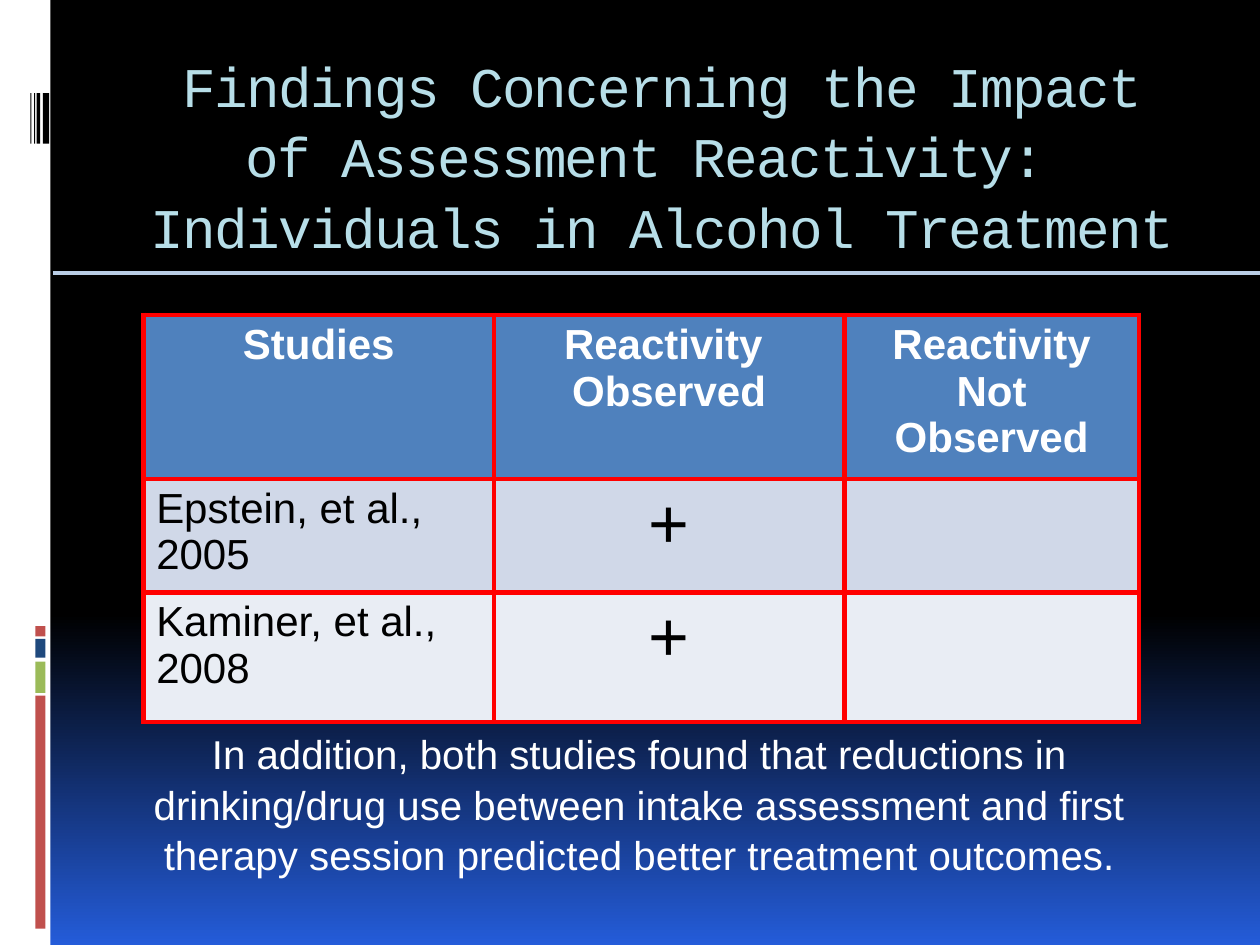
from pptx import Presentation
from pptx.dml.color import RGBColor
from pptx.enum.shapes import MSO_CONNECTOR, MSO_SHAPE
from pptx.enum.text import PP_ALIGN
from pptx.oxml import parse_xml
from pptx.oxml.ns import nsdecls
from pptx.util import Inches, Pt
from lxml.etree import SubElement
from pptx.oxml.ns import qn

BLACK = RGBColor(0x00, 0x00, 0x00)
WHITE = RGBColor(0xFF, 0xFF, 0xFF)
ROYAL = RGBColor(0x24, 0x5C, 0xD9)
RED = RGBColor(0xC0, 0x50, 0x4D)
GREEN = RGBColor(0x9B, 0xBB, 0x59)
NAVY = RGBColor(0x1F, 0x49, 0x7D)
AQUA = RGBColor(0xB7, 0xDE, 0xE8)
PALE = RGBColor(0xB9, 0xCD, 0xE5)
HEAD = RGBColor(0x4F, 0x81, 0xBD)
BANDS = [RGBColor(0xD0, 0xD8, 0xE8), RGBColor(0xE9, 0xED, 0xF4)]
BORDER = RGBColor(0xFF, 0x00, 0x00)


def style(par, size, color, font="Arial", bold=False, align=PP_ALIGN.CENTER):
    par.alignment = align
    for run in par.runs:
        run.font.size = Pt(size)
        run.font.name = font
        run.font.bold = bold
        run.font.color.rgb = color


def outline(cell):
    """Draw a 3 pt border on all four sides of a cell."""
    props = cell._tc.get_or_add_tcPr()
    for spot, side in enumerate(("lnL", "lnR", "lnT", "lnB")):
        props.insert(spot, parse_xml(
            f'<a:{side} {nsdecls("a")} w="{Pt(3)}"><a:solidFill>'
            f'<a:srgbClr val="{BORDER}"/></a:solidFill></a:{side}>'))


deck = Presentation()
deck.slide_width, deck.slide_height = Inches(10), Inches(7.5)
slide = deck.slides.add_slide(deck.slide_layouts[6])
shapes = slide.shapes

# Background: black, fading to blue at the bottom
back = slide.background.fill
back.gradient()
back.gradient_angle = 270
for stop, place, color in zip(back.gradient_stops, (0.65, 1), (BLACK, ROYAL)):
    stop.position = place
    stop.color.rgb = color

# Side strip with coloured blocks and thin black bars
bars = [
    (0, 0, 0.4, 7.5, WHITE),
    (0.28, 5.52, 0.08, 1.85, RED),
    (0.28, 5.25, 0.08, 0.25, GREEN),
    (0.28, 5.07, 0.08, 0.15, NAVY),
    (0.28, 4.97, 0.08, 0.08, RED),
]
for left, width in ((0.34, 0.05), (0.29, 0.03), (0.27, 0.01), (0.24, 0.01)):
    bars.append((left, 0.74, width, 0.4, BLACK))
for *box, color in bars:
    bar = shapes.add_shape(MSO_SHAPE.RECTANGLE, *map(Inches, box))
    bar.shadow.inherit = False
    bar.fill.solid()
    bar.fill.fore_color.rgb = color
    bar.line.fill.background()

# Title
title = shapes.add_textbox(Inches(1), Inches(0.33), Inches(8.5), Inches(1))
title.text_frame.word_wrap = True
par = title.text_frame.paragraphs[0]
par.text = ("Findings Concerning the Impact of Assessment Reactivity: \v"
            "Individuals in Alcohol Treatment ")
par.line_spacing = 1.05
style(par, 32, AQUA, "Courier New")
for run in par.runs:
    run.font._element.set("spc", "-100")

# Table of studies
rows = [
    ("Studies", "Reactivity \nObserved", "Reactivity Not\nObserved"),
    ("Epstein, et al., 2005", "+", ""),
    ("Kaminer, et al., 2008", "+", ""),
]
table = shapes.add_table(3, 3, Inches(1.14), Inches(2.5),
                         Inches(7.9), Inches(2.63)).table
for col, width in zip(table.columns, (2.78, 2.78, 2.34)):
    col.width = Inches(width)
for row, height in zip(table.rows, (0.8, 0.8, 1.03)):
    row.height = Inches(height)
for r, texts in enumerate(rows):
    for c, text in enumerate(texts):
        cell = table.cell(r, c)
        cell.text_frame.text = text
        cell.fill.solid()
        cell.fill.fore_color.rgb = BANDS[r - 1] if r else HEAD
        outline(cell)
        for par in cell.text_frame.paragraphs:
            if r == 0:
                style(par, 24, WHITE, bold=True)
            elif c == 0:
                style(par, 24, BLACK, align=PP_ALIGN.LEFT)
            else:
                style(par, 40, BLACK)

# Rule under the title
rule = shapes.add_connector(MSO_CONNECTOR.STRAIGHT, Inches(0.42), Inches(2.17),
                            Inches(10), Inches(2.17))
rule.line.color.rgb = PALE
rule.line.width = Pt(2.25)
SubElement(rule._element.spPr, qn("a:effectLst"))

# Closing remark
note = shapes.add_textbox(Inches(1.08), Inches(5.72), Inches(8), Inches(1.83))
note.text_frame.word_wrap = True
par = note.text_frame.paragraphs[0]
par.text = ("In addition, both studies found that reductions in drinking/drug "
            "use between intake assessment and first therapy session predicted "
            "better treatment outcomes.")
par.space_before = par.space_after = Pt(6)
par.line_spacing = 1.05
style(par, 23, WHITE)

deck.save("out.pptx")
